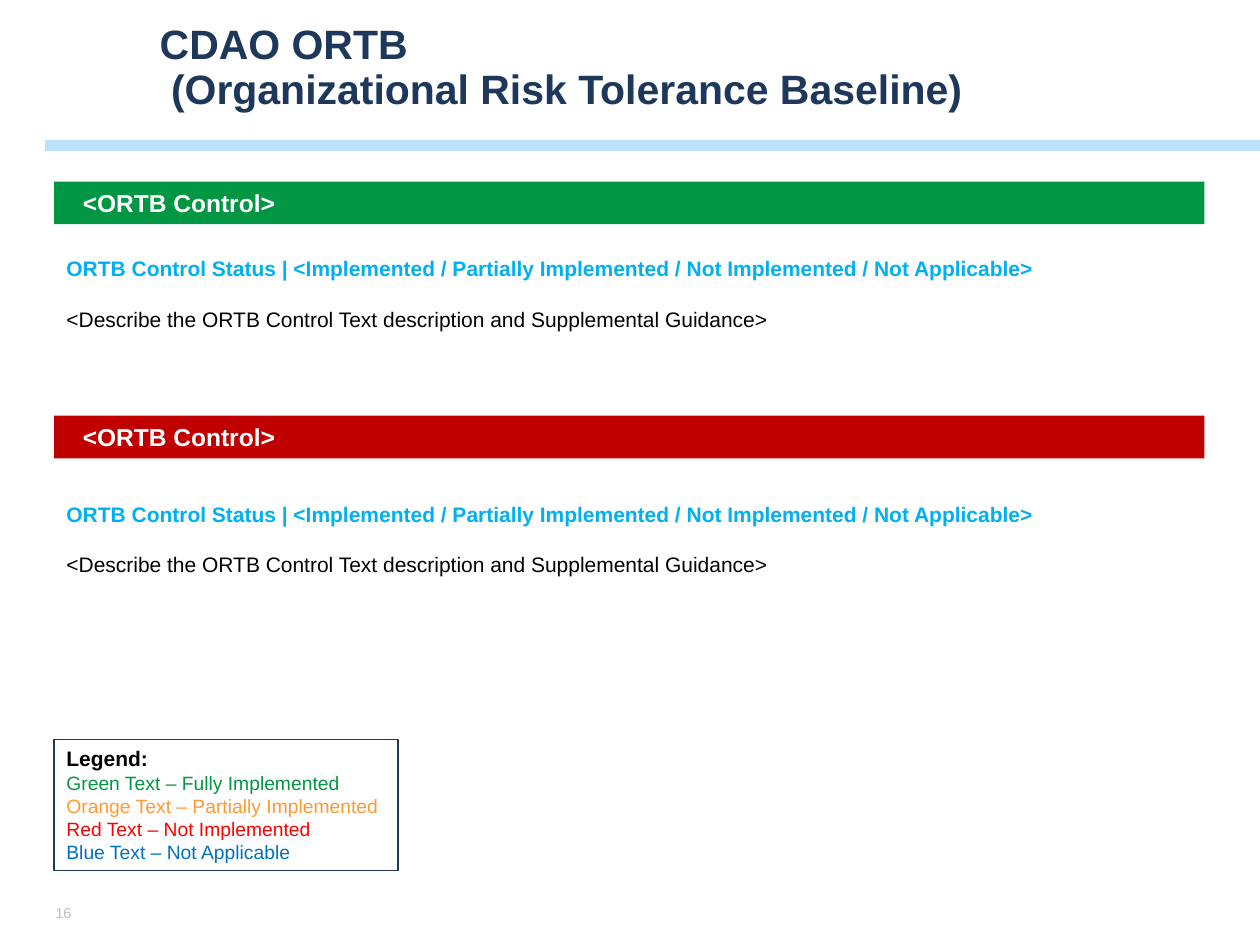
"""Build the ORTB control status slide."""
from lxml import etree
from pptx import Presentation
from pptx import util as u
from pptx.dml.color import RGBColor
from pptx.enum import shapes, text
from pptx.oxml import ns

NAVY = RGBColor(0x1D, 0x38, 0x5B)
SKY = RGBColor(0x65, 0xBA, 0xF5)
CYAN = RGBColor(0x00, 0xB0, 0xF0)
GREEN = RGBColor(0x00, 0x96, 0x44)
ORANGE = RGBColor(0xFF, 0x99, 0x33)
RED = RGBColor(0xFF, 0x00, 0x00)
DARK_RED = RGBColor(0xC0, 0x00, 0x00)
BLUE = RGBColor(0x00, 0x70, 0xC0)
GREY = RGBColor(0xBF, 0xBF, 0xBF)
BLACK = RGBColor(0x00, 0x00, 0x00)
WHITE = RGBColor(0xFF, 0xFF, 0xFF)

LEFT = 1.09
BAR_WIDTH = 23.19
STATUS = ("ORTB Control Status | <Implemented / Partially Implemented"
          " / Not Implemented / Not Applicable>")
GUIDANCE = "<Describe the ORTB Control Text description and Supplemental Guidance>"
LEGEND = [
    ("Green Text – Fully Implemented", GREEN),
    ("Orange Text – Partially Implemented", ORANGE),
    ("Red Text – Not Implemented", RED),
    ("Blue Text – Not Applicable", BLUE),
]
CONTROLS = [(3.66, 5.03, GREEN), (8.38, 9.98, DARK_RED)]


class Deck:
    def __init__(self, s, font="Arial"):
        self.s = s
        self.font = font

    def fill_text(self, sp, lines, anchor=text.MSO_ANCHOR.TOP, **frame):
        tf = sp.text_frame
        frame = {"word_wrap": True, "vertical_anchor": anchor, **frame}
        for name, value in frame.items():
            setattr(tf, name, value)
        for i, (words, size, color, bold, para) in enumerate(lines):
            p = tf.add_paragraph() if i else tf.paragraphs[0]
            p.text = words
            for name, value in {"alignment": text.PP_ALIGN.LEFT, **para}.items():
                setattr(p, name, value)
            for r in p.runs:
                r.font.color.rgb = color
                style = {"name": self.font, "size": u.Pt(size), "bold": bold}
                for name, value in style.items():
                    setattr(r.font, name, value)

    def box(self, at, lines, **frame):
        sp = self.s.shapes.add_textbox(*map(u.Cm, at))
        self.fill_text(sp, lines, **frame)

    def rect(self, at, fill, line=None, alpha=None):
        sp = self.s.shapes.add_shape(shapes.MSO_SHAPE.RECTANGLE, *map(u.Cm, at))
        sp.shadow.inherit = False
        sp.fill.solid()
        sp.fill.fore_color.rgb = fill
        if line is None:
            sp.line.fill.background()
        else:
            sp.line.color.rgb = line
            sp.line.width = u.Pt(1)
        if alpha is not None:
            clr = sp.element.spPr.find(".//" + ns.qn("a:srgbClr"))
            etree.SubElement(clr, ns.qn("a:alpha"), val=str(alpha * 1000))
        return sp

    def bar(self, top, fill):
        sp = self.rect((LEFT, top, BAR_WIDTH, 0.86), fill)
        self.fill_text(sp, [("<ORTB Control>", 14, WHITE, True, {})],
                       margin_left=u.Cm(0.58))

    def control(self, top, body_top, fill):
        self.bar(top, fill)
        self.box((LEFT, body_top, 23.06, 2.31), [
            (STATUS, 12, CYAN, True, {}),
            (GUIDANCE, 12, BLACK, False, {"space_before": u.Pt(14.5)}),
        ])

    def legend(self):
        sp = self.rect((LEFT, 14.91, 6.93, 2.64), WHITE, NAVY)
        self.fill_text(sp, [("Legend:", 12, BLACK, True, {})] + [
            (words, 11, color, False, {}) for words, color in LEGEND])


def main():
    prs = Presentation()
    prs.slide_width, prs.slide_height = u.Cm(25.4), u.Cm(19.05)
    s = prs.slides.add_slide(prs.slide_layouts[6])
    deck = Deck(s)
    deck.rect((0.91, 2.82, 24.49, 0.23), SKY, alpha=43)
    deck.box((0.94, 18.08, 0.81, 0.66), [("16", 8.2, GREY, False, {})],
             anchor=text.MSO_ANCHOR.MIDDLE,
             margin_left=u.Cm(0.18), margin_right=u.Cm(0.18),
             margin_top=u.Cm(0.1), margin_bottom=u.Cm(0.1))
    title = "CDAO ORTB\v (Organizational Risk Tolerance Baseline)"
    deck.box((2.97, 0, 21.87, 2.77),
             [(title, 23.4, NAVY, True, {"line_spacing": 0.9})],
             anchor=text.MSO_ANCHOR.MIDDLE)
    deck.legend()
    for top, body_top, fill in CONTROLS:
        deck.control(top, body_top, fill)
    prs.save("out.pptx")


if __name__ == "__main__":
    main()
